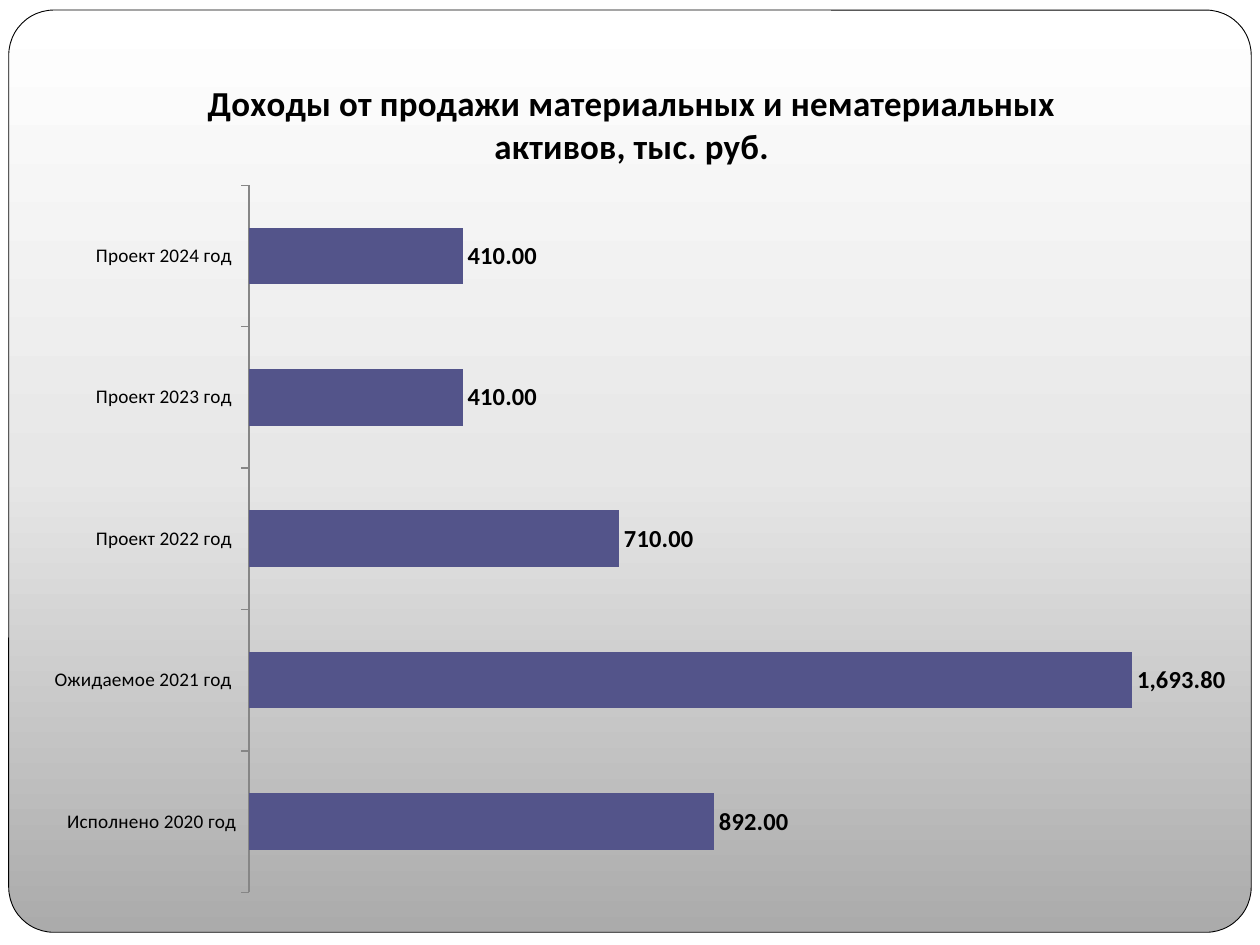
from copy import deepcopy

from pptx import Presentation
from pptx.chart.data import CategoryChartData
from pptx.dml.color import RGBColor
from pptx.enum.chart import XL_CHART_TYPE as ChartType
from pptx.enum.chart import XL_LABEL_POSITION as LabelPosition
from pptx.enum.chart import XL_TICK_MARK as TickMark
from pptx.enum.shapes import MSO_SHAPE as Shape
from pptx.oxml import parse_xml
from pptx.oxml.ns import nsdecls, qn
from pptx.util import Pt

TITLE = "Доходы от продажи материальных и нематериальных активов, тыс. руб."
INCOME = {
    "Исполнено 2020 год": 892,
    "Ожидаемое 2021 год ": 1693.8,
    "Проект 2022 год ": 710,
    "Проект 2023 год ": 410,
    "Проект 2024 год ": 410,
}
NUMBER_FORMAT = "#,##0.00"
GRADIENT = [(0, "ABABAB"), (0.5, "E7E7E7"), (1, "FFFFFF")]


def color(value):
    """Turn a hex string into a colour."""
    return RGBColor.from_string(value)


def style_font(font, size, bold=False):
    """Set black Calibri of the given size."""
    font.name = "Calibri"
    font.size = Pt(size)
    font.bold = bold
    font.color.rgb = color("000000")


def fill_gradient(shape):
    """Fill a shape with grey at the bottom rising to white."""
    shape.fill.gradient()
    shape.fill.gradient_angle = 90
    first = next(shape._element.spPr.iter(qn("a:gs")))
    first.addnext(deepcopy(first))
    for stop, (position, value) in zip(shape.fill.gradient_stops, GRADIENT):
        stop.position = position
        stop.color.rgb = color(value)


def add_backdrop(page, width, height):
    """Draw the white page and the rounded gradient panel on it."""
    sheet = page.shapes.add_shape(Shape.RECTANGLE, 0, 0, Pt(width), Pt(height))
    sheet.shadow.inherit = False
    sheet.fill.solid()
    sheet.fill.fore_color.rgb = color("FFFFFF")
    sheet.line.fill.background()

    panel = page.shapes.add_shape(
        Shape.ROUNDED_RECTANGLE, Pt(5), Pt(5.75), Pt(width - 10), Pt(height - 13)
    )
    panel.shadow.inherit = False
    panel.adjustments[0] = 0.049
    fill_gradient(panel)
    panel.line.color.rgb = color("000000")
    panel.line.width = Pt(0.5)


def make_layout(target="", **parts):
    """Build a manual chart layout from fractions of the chart box."""
    inner = f'<c:layoutTarget val="{target}"/>' if target else ""
    inner += "".join(f'<c:{side}Mode val="edge"/>' for side in "xy")
    inner += "".join(f'<c:{name} val="{value}"/>' for name, value in parts.items())
    return parse_xml(
        f'<c:layout {nsdecls("c")}><c:manualLayout>{inner}</c:manualLayout></c:layout>'
    )


def set_layout(parent, layout, after=None):
    """Replace the layout of a chart part."""
    for old in parent.findall(qn("c:layout")):
        parent.remove(old)
    if after is None:
        parent.insert(0, layout)
    else:
        after.addnext(layout)


def add_income_chart(page, left, top, width, height):
    """Draw the bar chart of income by year."""
    data = CategoryChartData(number_format=NUMBER_FORMAT)
    data.categories = list(INCOME)
    data.add_series(TITLE, list(INCOME.values()))
    chart = page.shapes.add_chart(
        ChartType.BAR_CLUSTERED, Pt(left), Pt(top), Pt(width), Pt(height), data
    ).chart
    style_font(chart.font, 10)
    chart.has_legend = False

    chart.has_title = True
    title = chart.chart_title
    span = title.text_frame.paragraphs[0].add_run()
    span.text = TITLE
    style_font(span.font, 20, bold=True)
    title.include_in_layout = False
    set_layout(title._element, make_layout(x=0.14, y=0.04), title._element.find(qn("c:tx")))

    plot = chart.plots[0]
    plot.gap_width = 150
    plot.vary_by_categories = False
    area = chart._chartSpace.chart.plotArea
    set_layout(area, make_layout("inner", x=0.18, y=0.17, w=0.79, h=0.81))

    bars = plot.series[0]
    bars.format.fill.solid()
    bars.format.fill.fore_color.rgb = color("53548A")
    labels = bars.data_labels
    labels.show_value = True
    labels.number_format = NUMBER_FORMAT
    labels.number_format_is_linked = False
    labels.position = LabelPosition.OUTSIDE_END
    style_font(labels.font, 14, bold=True)

    years = chart.category_axis
    years.major_tick_mark = TickMark.OUTSIDE
    years.format.line.color.rgb = color("868686")
    style_font(years.tick_labels.font, 11)
    amounts = chart.value_axis
    amounts.visible = False
    amounts.has_major_gridlines = False
    amounts.minimum_scale = 0
    amounts.maximum_scale = 1800


def main():
    """Build the deck and save it."""
    deck = Presentation()
    deck.slide_width, deck.slide_height = Pt(720), Pt(540)
    page = deck.slides.add_slide(deck.slide_layouts[6])
    add_backdrop(page, 720, 540)
    add_income_chart(page, 20, 21, 680.5, 499)
    deck.save("out.pptx")


if __name__ == "__main__":
    main()
